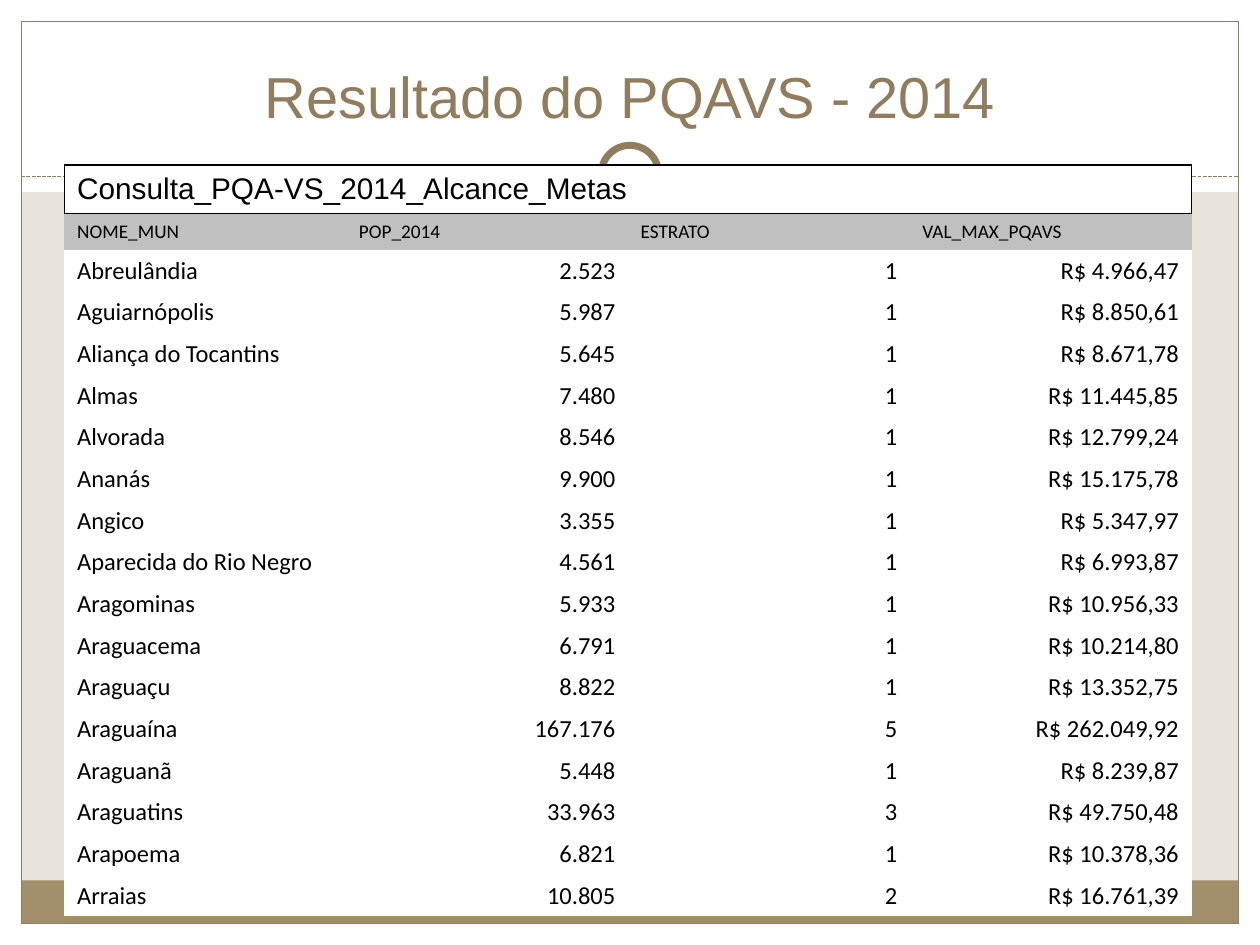
"""Build the slide with the 2014 PQAVS results by town."""
from dataclasses import dataclass
from lxml.etree import SubElement
from pptx import Presentation
from pptx.dml.color import RGBColor
from pptx.enum.dml import MSO_LINE
from pptx.enum.shapes import MSO_CONNECTOR, MSO_SHAPE
from pptx.enum.text import MSO_ANCHOR, PP_ALIGN
from pptx.oxml.ns import qn
from pptx.util import Cm, Pt


@dataclass(frozen=True)
class Theme:
    paper: str = "E9E5DC"
    white: str = "FFFFFF"
    black: str = "000000"
    gray: str = "C0C0C0"
    tan: str = "A28E6A"
    brown: str = "8F7D5E"
    head: str = "Arial"
    body: str = "Calibri"
    title: int = 33
    name: int = 17
    label: int = 11
    text: int = 14
    thin: float = 0.75
    ring: int = 4
    plain: str = "{2D5ABB26-0587-4C30-8999-92F81FD0307C}"


LOOK = Theme()
WIDE, HIGH, EDGE = 25.4, 19.05, 0.43
LABELS = ("NOME_MUN", "POP_2014", "ESTRATO", "VAL_MAX_PQAVS")
TOWNS = (
    ("Abreulândia", "2.523", "1", "R$ 4.966,47"),
    ("Aguiarnópolis", "5.987", "1", "R$ 8.850,61"),
    ("Aliança do Tocantins", "5.645", "1", "R$ 8.671,78"),
    ("Almas", "7.480", "1", "R$ 11.445,85"),
    ("Alvorada", "8.546", "1", "R$ 12.799,24"),
    ("Ananás", "9.900", "1", "R$ 15.175,78"),
    ("Angico", "3.355", "1", "R$ 5.347,97"),
    ("Aparecida do Rio Negro", "4.561", "1", "R$ 6.993,87"),
    ("Aragominas", "5.933", "1", "R$ 10.956,33"),
    ("Araguacema", "6.791", "1", "R$ 10.214,80"),
    ("Araguaçu", "8.822", "1", "R$ 13.352,75"),
    ("Araguaína", "167.176", "5", "R$ 262.049,92"),
    ("Araguanã", "5.448", "1", "R$ 8.239,87"),
    ("Araguatins", "33.963", "3", "R$ 49.750,48"),
    ("Arapoema", "6.821", "1", "R$ 10.378,36"),
    ("Arraias", "10.805", "2", "R$ 16.761,39"),
)


def apply(item, values):
    """Set each named value on the item."""
    for name, value in values.items():
        setattr(item, name, value)


def paint(fill, color):
    """Make a fill solid in one colour."""
    fill.solid()
    fill.fore_color.rgb = RGBColor.from_string(color)


def write(frame, text, font, size, color, align=PP_ALIGN.LEFT):
    """Put one styled line of text in a frame."""
    line = frame.paragraphs[0]
    line.alignment = align
    run = line.add_run()
    run.text = text
    apply(run.font, {"name": font, "size": Pt(size)})
    run.font.color.rgb = RGBColor.from_string(color)


def add_form(slide, kind, box, fill=None, width=None):
    """Add a preset shape with an optional fill and brown outline."""
    form = slide.shapes.add_shape(kind, *map(Cm, box))
    form.shadow.inherit = False
    if fill:
        paint(form.fill, fill)
    else:
        form.fill.background()
    if width:
        paint(form.line.fill, LOOK.brown)
        form.line.width = Pt(width)
    else:
        form.line.fill.background()


def add_rule(slide, top):
    """Add the dashed rule from edge to edge."""
    rule = slide.shapes.add_connector(
        MSO_CONNECTOR.STRAIGHT, Cm(EDGE), Cm(top), Cm(WIDE - EDGE), Cm(top))
    paint(rule.line.fill, LOOK.brown)
    apply(rule.line, {"width": Pt(LOOK.thin), "dash_style": MSO_LINE.SQUARE_DOT})
    SubElement(rule._element.spPr, qn("a:effectLst"))


def add_frame(slide):
    """Add the white margins, foot band, outline, rule and ring."""
    inner = WIDE - 2 * EDGE
    for box, fill in (
        ((0, HIGH - EDGE, WIDE, EDGE), LOOK.white),
        ((0, 0, WIDE, 3.87), LOOK.white),
        ((0, 0, EDGE, HIGH), LOOK.white),
        ((WIDE - EDGE, 0, EDGE, HIGH), LOOK.white),
        ((EDGE, 17.75, inner, 0.87), LOOK.tan),
    ):
        add_form(slide, MSO_SHAPE.RECTANGLE, box, fill)
    add_form(slide, MSO_SHAPE.RECTANGLE,
             (EDGE, EDGE, inner, HIGH - 2 * EDGE), width=LOOK.thin)
    add_rule(slide, 3.56)
    for size, width in ((1.7, None), (1.16, LOOK.ring)):
        box = ((WIDE - size) / 2, 3.51 - size / 2, size, size)
        add_form(slide, MSO_SHAPE.OVAL, box, LOOK.white, width)


def add_title(slide, text):
    """Add the centred slide title."""
    frame = slide.shapes.add_textbox(
        Cm(0.85), Cm(0.64), Cm(23.7), Cm(2.11)).text_frame
    apply(frame, {"word_wrap": True, "vertical_anchor": MSO_ANCHOR.BOTTOM})
    write(frame, text, LOOK.head, LOOK.title, LOOK.brown, PP_ALIGN.CENTER)


def fill_cell(cell, text, font, size, fill, values, align=PP_ALIGN.LEFT):
    """Set the text, fill and layout of a cell."""
    apply(cell, values)
    write(cell.text_frame, text, font, size, LOOK.black, align)
    paint(cell.fill, fill)


def add_edges(cell):
    """Draw a thin black line on each side of a cell."""
    props = cell._tc.get_or_add_tcPr()
    for spot, side in enumerate(("lnL", "lnR", "lnT", "lnB")):
        line = SubElement(props, qn(f"a:{side}"), w=str(Pt(1)))
        fill = SubElement(line, qn("a:solidFill"))
        SubElement(fill, qn("a:srgbClr"), val=LOOK.black)
        props.insert(spot, line)


def add_grid(slide):
    """Add the table of towns under its name and labels."""
    high = [0.97, 0.73] + [0.84] * len(TOWNS)
    shape = slide.shapes.add_table(
        len(high), len(LABELS), Cm(1.3), Cm(3.33), Cm(22.72), Cm(sum(high)))
    grid = shape.table
    apply(grid, {"first_row": False, "horz_banding": False})
    grid._tbl.tblPr.find(qn("a:tableStyleId")).text = LOOK.plain
    for row, size in zip(grid.rows, high):
        row.height = Cm(size)
    mid = {"vertical_anchor": MSO_ANCHOR.MIDDLE}
    tight = {"margin_top": Cm(0.12), "margin_bottom": Cm(0.12)}
    name = grid.cell(0, 0)
    name.merge(grid.cell(0, len(LABELS) - 1))
    fill_cell(name, "Consulta_PQA-VS_2014_Alcance_Metas",
              LOOK.head, LOOK.name, LOOK.white, mid)
    add_edges(name)
    for col, text in enumerate(LABELS):
        fill_cell(grid.cell(1, col), text, LOOK.body, LOOK.label, LOOK.gray, mid)
    for row, town in enumerate(TOWNS, 2):
        for col, text in enumerate(town):
            align = PP_ALIGN.RIGHT if col else PP_ALIGN.LEFT
            fill_cell(grid.cell(row, col), text, LOOK.body, LOOK.text,
                      LOOK.white, tight, align)


def main():
    """Build and save the slide."""
    deck = Presentation()
    apply(deck, {"slide_width": Cm(WIDE), "slide_height": Cm(HIGH)})
    slide = deck.slides.add_slide(deck.slide_layouts[6])
    paint(slide.background.fill, LOOK.paper)
    add_frame(slide)
    add_title(slide, "Resultado do PQAVS - 2014")
    add_grid(slide)
    deck.save("out.pptx")


if __name__ == "__main__":
    main()
